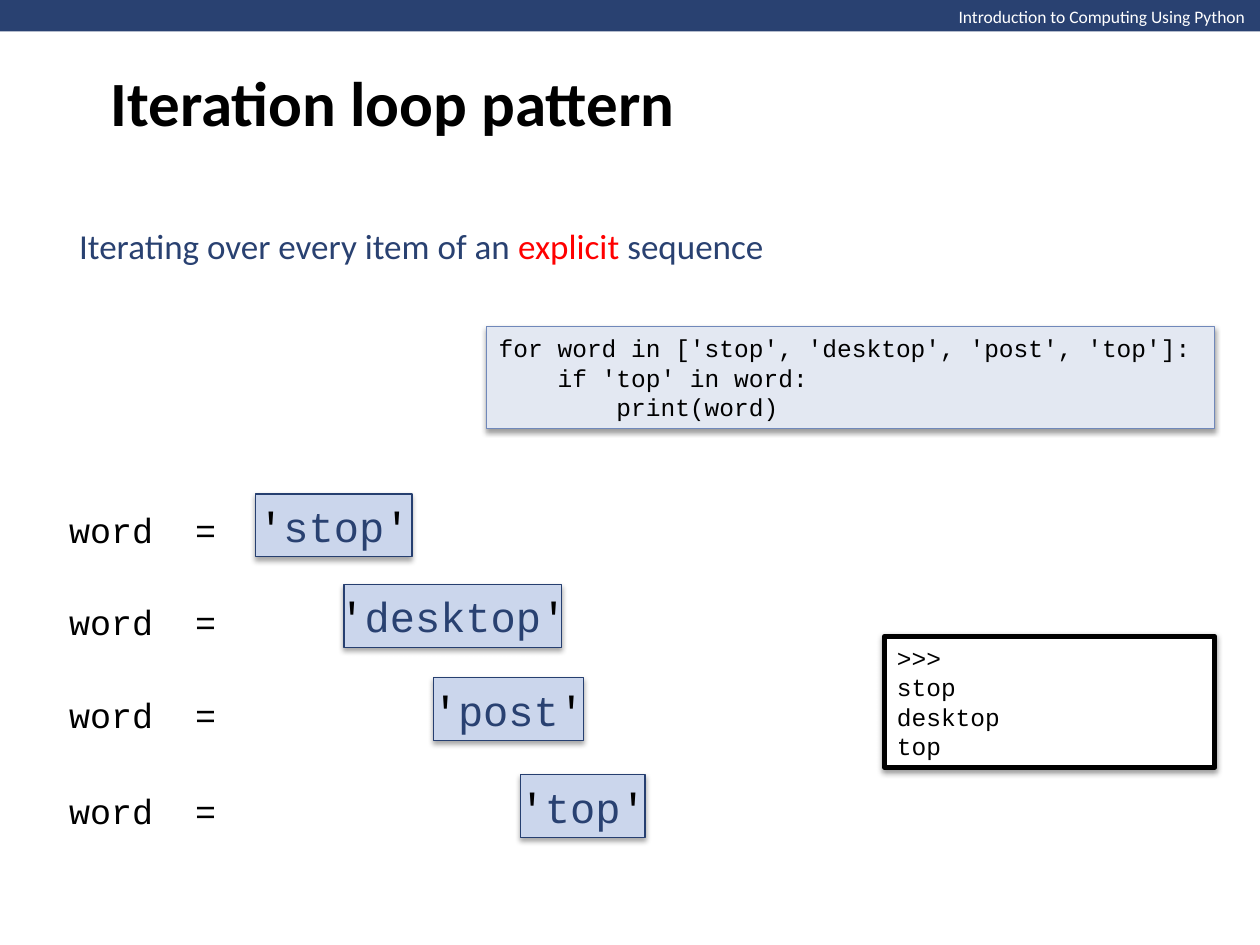
from lxml import etree
from pptx import Presentation
from pptx.dml.color import RGBColor
from pptx.enum.shapes import MSO_SHAPE
from pptx.enum.text import MSO_ANCHOR, PP_ALIGN
from pptx.oxml.ns import qn
from pptx.util import Inches, Pt

COLORS = {
    "navy": "294171", "black": "000000", "white": "FFFFFF", "red": "FF0000",
    "word_fill": "CBD6EC", "word_line": "263F70",
    "code_fill": "E3E8F2", "code_line": "7088BA",
}

presentation = Presentation()
presentation.slide_width = Inches(10)
presentation.slide_height = Inches(7.5)
slide = presentation.slides.add_slide(presentation.slide_layouts[6])


def add_text(box, lines, font, size, bold=False, wrap=True,
             anchor=MSO_ANCHOR.MIDDLE, align=PP_ALIGN.LEFT):
    """Fill a box with lines, each a list of (text, color) runs."""
    frame = box.text_frame
    frame.word_wrap = wrap
    frame.vertical_anchor = anchor
    for index, line in enumerate(lines):
        paragraph = frame.paragraphs[0] if index == 0 else frame.add_paragraph()
        paragraph.alignment = align
        for text, color in line:
            run = paragraph.add_run()
            run.text = text
            run.font.name = font
            run.font.size = Pt(size)
            run.font.bold = bold
            run.font.color.rgb = RGBColor.from_string(COLORS[color])


def add_box(left, top, width, height, fill, line=None, line_width=0.75,
            opacity=38, distance=1.6):
    """Add a rectangle; an outlined one also casts a soft shadow downwards."""
    shape = slide.shapes.add_shape(MSO_SHAPE.RECTANGLE, Inches(left), Inches(top),
                                   Inches(width), Inches(height))
    shape.shadow.inherit = False
    shape.fill.solid()
    shape.fill.fore_color.rgb = RGBColor.from_string(COLORS[fill])
    if line is None:
        shape.line.fill.background()
        return shape
    shape.line.color.rgb = RGBColor.from_string(COLORS[line])
    shape.line.width = Pt(line_width)
    effects = shape._element.spPr.find(qn("a:effectLst"))
    shadow = etree.SubElement(effects, qn("a:outerShdw"), blurRad=str(Pt(3.1)),
                              dist=str(Pt(distance)), dir="5400000", rotWithShape="0")
    color = etree.SubElement(shadow, qn("a:srgbClr"), val=COLORS["black"])
    etree.SubElement(color, qn("a:alpha"), val=str(opacity * 1000))
    return shape


# Header bar
add_box(0, 0, 10.01, 0.25, "navy")
header = slide.shapes.add_textbox(Inches(7.51), Inches(0), Inches(2.5), Inches(0.27))
add_text(header, [[("Introduction to Computing Using Python", "white")]],
         "Calibri", 10, wrap=False, anchor=MSO_ANCHOR.TOP)

# Title and subtitle
title = slide.shapes.add_textbox(Inches(0.78), Inches(0), Inches(8.5), Inches(1.61))
add_text(title, [[("Iteration loop pattern", "black")]], "Calibri", 36, bold=True)
subtitle = slide.shapes.add_textbox(Inches(0.53), Inches(1.73), Inches(8.93), Inches(0.44))
add_text(subtitle, [[("Iterating over every item of an ", "navy"),
                     ("explicit ", "red"), ("sequence", "navy")]], "Calibri", 20)

# One row per value of the loop variable
word_rows = [
    ("stop", 2.03, 3.92, 1.24, 3.98),
    ("desktop", 2.73, 4.64, 1.73, 4.71),
    ("post", 3.44, 5.38, 1.19, 5.45),
    ("top", 4.13, 6.15, 0.99, 6.21),
]
for word, left, top, width, label_top in word_rows:
    label = slide.shapes.add_textbox(Inches(0.45), Inches(label_top),
                                     Inches(1.38), Inches(0.44))
    add_text(label, [[("word  =", "black")]], "Courier New", 20, wrap=False)
    word_box = add_box(left, top, width, 0.5, "word_fill", "word_line",
                       opacity=35, distance=1.8)
    add_text(word_box, [[("'", "black"), (word, "navy"), ("'", "black")]],
             "Courier New", 24, wrap=False, align=PP_ALIGN.CENTER)

# Code and its output
code_lines = [
    "for word in ['stop', 'desktop', 'post', 'top']:",
    "    if 'top' in word:",
    "        print(word)",
]
code_box = add_box(3.86, 2.59, 5.78, 0.81, "code_fill", "code_line")
add_text(code_box, [[(line, "black")] for line in code_lines], "Courier New", 14)

output_lines = [">>>", "stop", "desktop", "top"]
output_box = add_box(7.02, 5.05, 2.62, 1.04, "white", "black", line_width=3)
add_text(output_box, [[(line, "black")] for line in output_lines], "Courier New", 14)

presentation.save("out.pptx")
